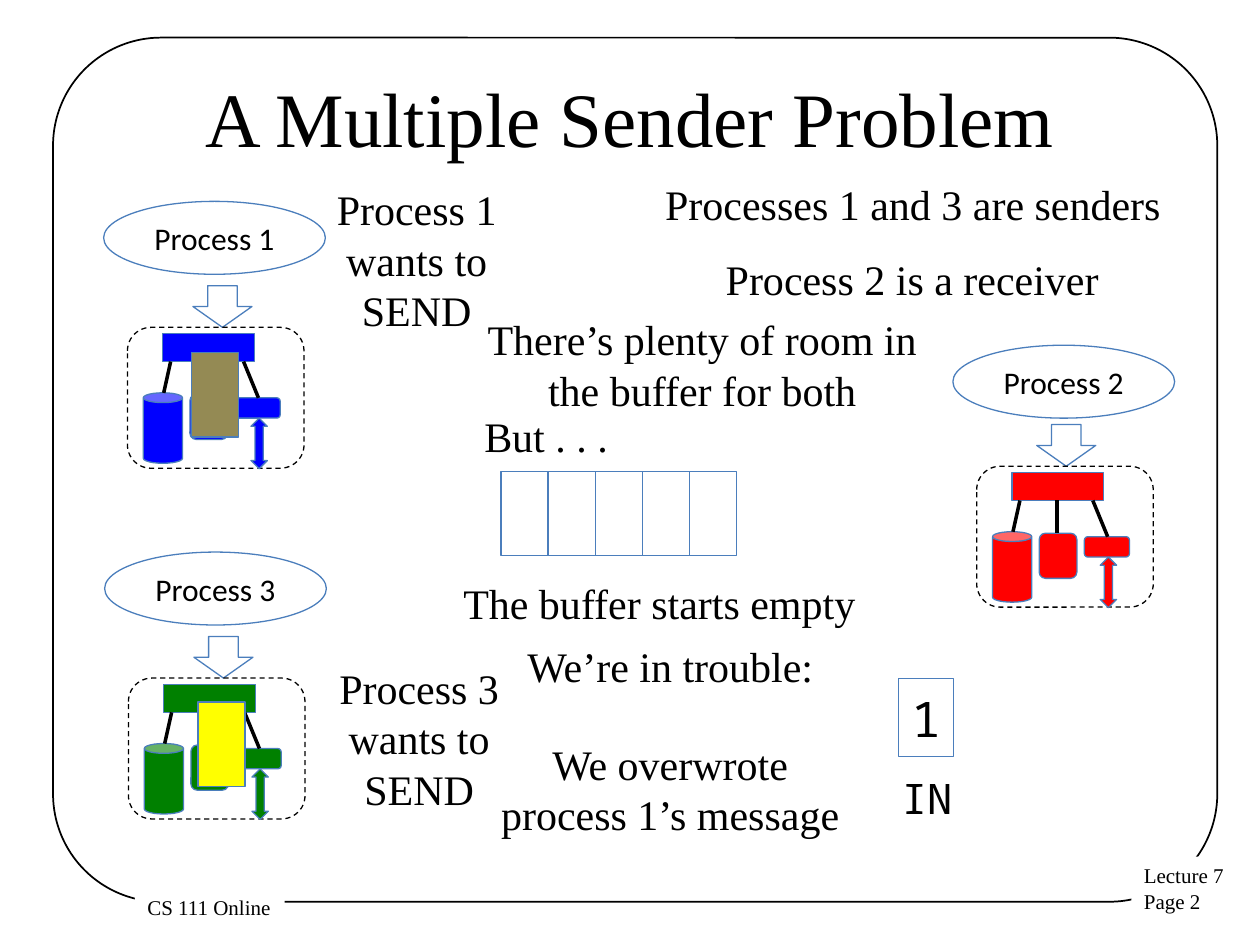
from pptx import Presentation
from pptx import util as u
from pptx.dml.color import RGBColor
from pptx.enum import dml, shapes, text
from pptx.oxml import parse_xml
from pptx.oxml.ns import nsdecls

SERIF, SANS, MONO = "Times New Roman", "Calibri", "Noto Sans Mono"
BLACK, WHITE, OUTLINE = "000000", "FFFFFF", "4B7EBC"
KIND = shapes.MSO_SHAPE
CENTER, LEFT = text.PP_ALIGN.CENTER, text.PP_ALIGN.LEFT


def color(hex_value):
    """Return the colour for a hex string."""
    return RGBColor.from_string(hex_value)


def write(holder, words, size=24, font=SERIF, align=CENTER, wrap=True,
          anchor=text.MSO_ANCHOR.TOP):
    """Fill a shape with black text, one paragraph per line."""
    frame = holder.text_frame
    frame.text = words
    frame.word_wrap = wrap
    frame.vertical_anchor = anchor
    for paragraph in frame.paragraphs:
        paragraph.alignment = align
        paragraph.font.size = u.Pt(size)
        paragraph.font.name = font
        paragraph.font.color.rgb = color(BLACK)


def add_shape(slide, kind, left, top, width, height, fill=None, line=OUTLINE,
              weight=0.75):
    """Add a flat preset shape with optional fill and outline."""
    shape = slide.shapes.add_shape(kind, u.Cm(left), u.Cm(top), u.Cm(width), u.Cm(height))
    shape.shadow.inherit = False
    if fill:
        shape.fill.solid()
        shape.fill.fore_color.rgb = color(fill)
    else:
        shape.fill.background()
    if line:
        shape.line.color.rgb = color(line)
        shape.line.width = u.Pt(weight)
    else:
        shape.line.fill.background()
    return shape


def add_link(slide, x1, y1, x2, y2):
    """Draw a black straight connector."""
    link = slide.shapes.add_connector(
        shapes.MSO_CONNECTOR.STRAIGHT, u.Cm(x1), u.Cm(y1), u.Cm(x2), u.Cm(y2))
    link.line.color.rgb = color(BLACK)
    link.line.width = u.Pt(2)
    link._element.spPr.append(parse_xml(f"<a:effectLst {nsdecls('a')}/>"))


def add_note(slide, words, left, top, width, height=1.27, **style):
    """Add a text box."""
    box = slide.shapes.add_textbox(u.Cm(left), u.Cm(top), u.Cm(width), u.Cm(height))
    write(box, words, **style)


def add_process(slide, name, left, top, name_top, arrow_left, fill):
    """Draw a named process above its dashed machine."""
    label = add_shape(slide, KIND.OVAL, left - 0.48, name_top, 4.47, 1.47)
    write(label, name, size=18, font=SANS, anchor=text.MSO_ANCHOR.MIDDLE)
    add_shape(slide, KIND.DOWN_ARROW, arrow_left, top - 0.84, 1.19, 0.84, WHITE)
    machine = add_shape(slide, KIND.ROUNDED_RECTANGLE, left, top, 3.56, 2.84, line=BLACK)
    machine.line.dash_style = dml.MSO_LINE.DASH
    parts = [
        (KIND.RECTANGLE, 0.71, 0.13, 1.85, 0.56),
        (KIND.ROUNDED_RECTANGLE, 1.26, 1.35, 0.76, 0.91),
        (KIND.CAN, 0.32, 1.32, 0.79, 1.42),
        (KIND.ROUNDED_RECTANGLE, 2.17, 1.42, 0.91, 0.41),
        (KIND.UP_DOWN_ARROW, 2.49, 1.83, 0.33, 1.02),
    ]
    for kind, dx, dy, width, height in parts:
        add_shape(slide, kind, left + dx, top + dy, width, height, fill)
    for x1, x2, y2 in [(0.87, 0.73, 1.32), (2.34, 2.64, 1.42)]:
        add_link(slide, left + x1, top + 0.69, left + x2, top + y2)


def add_frame(slide):
    """Draw the page border with its footer labels."""
    border = add_shape(slide, KIND.ROUNDED_RECTANGLE, 1.07, 0.76, 23.47, 17.42,
                       line=BLACK, weight=1)
    border.adjustments[0] = 0.125
    for words, *place in [("Lecture 7\nPage 2", 22.81, 17.27, 2.13, 1.3),
                          ("CS 111 Online", 2.72, 17.91, 3.02, 0.76)]:
        label = add_shape(slide, KIND.RECTANGLE, *place, fill=WHITE, line=None)
        write(label, words, size=12, align=LEFT, wrap=False)


def main():
    """Build the slide and save it."""
    deck = Presentation()
    deck.slide_width, deck.slide_height = u.Cm(25.4), u.Cm(19.05)
    slide = deck.slides.add_slide(deck.slide_layouts[5])
    add_frame(slide)

    title = slide.shapes.title
    title.left, title.top = u.Cm(1.27), u.Cm(0.76)
    title.width, title.height = u.Cm(22.86), u.Cm(3.18)
    write(title, "A Multiple Sender Problem", size=44, anchor=text.MSO_ANCHOR.MIDDLE)

    add_process(slide, "Process 1", 2.57, 6.6, 4.06, 3.89, "0000FF")
    add_process(slide, "Process 2", 19.69, 9.4, 6.96, 20.9, "FF0000")
    add_process(slide, "Process 3", 2.59, 13.67, 11.13, 3.91, "008000")
    add_link(slide, 21.31, 10.08, 21.31, 10.74)

    cell_width, cell_height = 0.95, 1.7
    for slot in range(5):
        add_shape(slide, KIND.RECTANGLE, 10.1 + slot * cell_width, 9.5,
                  cell_width, cell_height)
    for left, top, fill in [(3.86, 7.11, "948A54"), (3.99, 14.15, "FFFF00")]:
        add_shape(slide, KIND.RECTANGLE, left, top, cell_width, cell_height, fill)

    for words, left, top, width in [
        ("Processes 1 and 3 are senders", 13.16, 3.48, 10.59),
        ("Process 2 is a receiver", 14.38, 4.98, 8.1),
        ("The buffer starts empty", 9.09, 11.51, 8.51),
    ]:
        add_note(slide, words, left, top, width, align=LEFT, wrap=False)
    for words, *place in [
        ("Process 1 wants to SEND", 6.1, 3.58, 4.6, 3.33),
        ("Process 3 wants to SEND", 6.15, 13.23, 4.6, 3.33),
        ("There’s plenty of room in the buffer for both", 9.09, 6.2, 10.13, 2.31),
        ("But . . . ", 6.05, 8.15, 10.13),
        ("We’re in trouble:", 10.11, 12.78, 6.81),
        ("We overwrote process 1’s message", 9.75, 14.76, 7.52, 2.31),
    ]:
        add_note(slide, words, *place)

    in_index = add_shape(slide, KIND.RECTANGLE, 18.11, 13.68, 1.12, 1.57, WHITE)
    write(in_index, "1", size=28, font=MONO, wrap=False, anchor=text.MSO_ANCHOR.MIDDLE)
    add_note(slide, "IN", 17.93, 15.44, 1.55, font=MONO, align=LEFT, wrap=False)

    deck.save("out.pptx")


if __name__ == "__main__":
    main()
